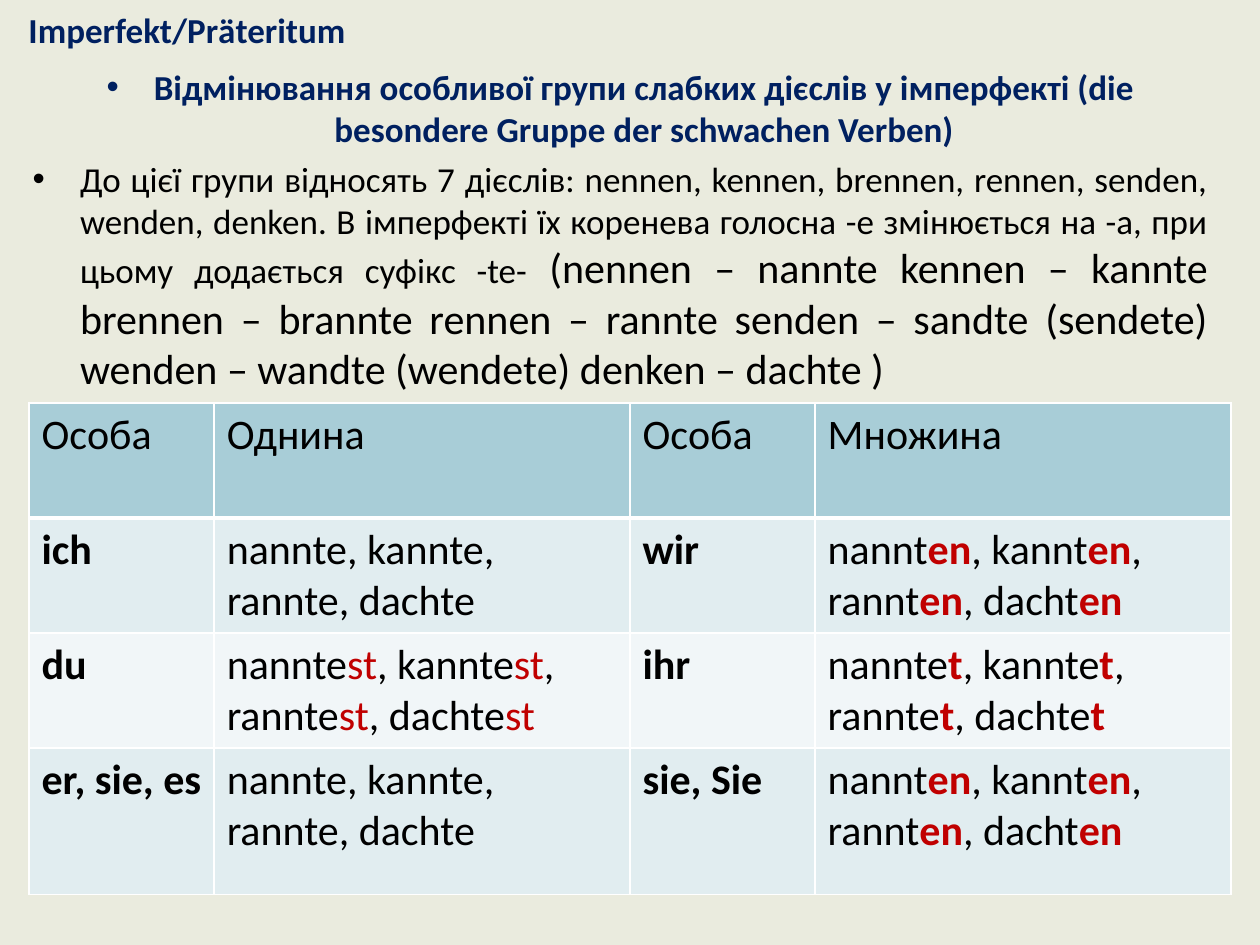
from lxml import etree
from pptx import Presentation
from pptx.dml.color import RGBColor
from pptx.enum.text import MSO_ANCHOR, MSO_AUTO_SIZE, PP_ALIGN
from pptx.oxml.ns import qn
from pptx.util import Inches, Pt

CENTER, JUSTIFY = PP_ALIGN.CENTER, PP_ALIGN.JUSTIFY
MIDDLE, NO_FIT = MSO_ANCHOR.MIDDLE, MSO_AUTO_SIZE.NONE
FONT = "Calibri"
NAVY, BLACK, RED, WHITE = "002060", "000000", "C00000", "FFFFFF"
BACKGROUND, HEADER_FILL = "EAEBDE", "A8CDD7"
BAND_FILLS = ["E1EDF0", "F1F6F8"]
COLUMN_WIDTHS = [1.47, 3.3] * 2
ROW_HEIGHTS = [0.91, 0.91, 0.91, 1.16]

HEADING = ("Відмінювання особливої групи слабких дієслів у імперфекті "
           "(die besondere Gruppe der schwachen Verben)")
RULE = ("До цієї групи відносять 7 дієслів: nennen, kennen, brennen, rennen, "
        "senden, wenden, denken. В імперфекті їх коренева голосна -е змінюється "
        "на -а, при цьому додається суфікс -te-")
EXAMPLES = (" (nennen – nannte kennen – kannte brennen – brannte rennen – rannte "
            "senden – sandte (sendete) wenden – wandte (wendete) denken – dachte )")
HEADERS = ["Особа", "Однина", "Особа", "Множина"]
STEMS = ["nannt", "kannt", "rannt", "dacht"]


def rgb(color):
    """Turn a hex string into a colour."""
    return RGBColor.from_string(color)


def add_run(paragraph, text, size=24, color=BLACK, bold=False):
    """Append one formatted run to a paragraph."""
    run = paragraph.add_run()
    run.text = text
    run.font.name = FONT
    run.font.size = Pt(size)
    run.font.bold = bold
    run.font.color.rgb = rgb(color)


def place(shape, left, top, width, height):
    """Move a placeholder to a place given in inches and fix its text size."""
    shape.left, shape.top = Inches(left), Inches(top)
    shape.width, shape.height = Inches(width), Inches(height)
    shape.text_frame.auto_size = NO_FIT


def fill_title(title):
    """Write the slide title."""
    place(title, 0, 0, 2.97, 0.47)
    title.text_frame.vertical_anchor = MIDDLE
    paragraph = title.text_frame.paragraphs[0]
    paragraph.alignment = CENTER
    add_run(paragraph, "Imperfekt/Prӓteritum", 20, NAVY, True)


def fill_body(body):
    """Write the heading and the grammar rule as bullets."""
    place(body, 0.16, 0.47, 9.53, 3.05)
    heading = body.text_frame.paragraphs[0]
    heading.alignment = CENTER
    add_run(heading, HEADING, 20, NAVY, True)
    rule = body.text_frame.add_paragraph()
    rule.alignment = JUSTIFY
    add_run(rule, RULE, 20)
    add_run(rule, EXAMPLES)


def plain(text, bold=False):
    """Give the runs of a cell with a single style."""
    return [(text, BLACK, bold)]


def conjugated(link, ending, bold):
    """Give the runs of all verbs with their endings in red."""
    runs = []
    for index, stem in enumerate(STEMS):
        separator = ", " if index else ""
        runs += [(separator + stem + link, BLACK, False), (ending, RED, bold)]
    return runs


def table_rows():
    """List the runs of every cell, row by row."""
    third_person = plain(", ".join(stem + "e" for stem in STEMS))
    plural = conjugated("", "en", True)
    return [
        [plain(text) for text in HEADERS],
        [plain("ich", True), third_person, plain("wir", True), plural],
        [plain("du", True), conjugated("e", "st", False),
         plain("ihr", True), conjugated("e", "t", True)],
        [plain("er, sie, es", True), third_person, plain("sie, Sie", True), plural],
    ]


def set_borders(cell, row):
    """Draw white cell borders, thicker below the header row."""
    properties = cell._tc.get_or_add_tcPr()
    thick_side = {0: "lnB", 1: "lnT"}.get(row)
    for side in ("lnL", "lnR", "lnT", "lnB"):
        width = Pt(3 if side == thick_side else 1)
        line = etree.SubElement(properties, qn("a:" + side), w=str(width))
        fill = etree.SubElement(line, qn("a:solidFill"))
        etree.SubElement(fill, qn("a:srgbClr"), val=WHITE)


def add_conjugation_table(slide):
    """Add the table of persons and verb forms."""
    rows = table_rows()
    table = slide.shapes.add_table(
        len(rows), len(HEADERS), Inches(0.23), Inches(3.2),
        Inches(sum(COLUMN_WIDTHS)), Inches(sum(ROW_HEIGHTS))).table
    for column, width in zip(table.columns, COLUMN_WIDTHS):
        column.width = Inches(width)
    for row, height in zip(table.rows, ROW_HEIGHTS):
        row.height = Inches(height)
    for row_index, row in enumerate(rows):
        fill = BAND_FILLS[(row_index - 1) % 2] if row_index else HEADER_FILL
        for column_index, runs in enumerate(row):
            cell = table.cell(row_index, column_index)
            set_borders(cell, row_index)
            cell.fill.solid()
            cell.fill.fore_color.rgb = rgb(fill)
            for text, color, bold in runs:
                add_run(cell.text_frame.paragraphs[0], text, color=color, bold=bold)


def main():
    """Build the slide and save it."""
    presentation = Presentation()
    presentation.slide_width, presentation.slide_height = Inches(10), Inches(7.5)
    slide = presentation.slides.add_slide(presentation.slide_layouts[1])
    slide.background.fill.solid()
    slide.background.fill.fore_color.rgb = rgb(BACKGROUND)
    fill_title(slide.shapes.title)
    fill_body(slide.placeholders[1])
    add_conjugation_table(slide)
    presentation.save("out.pptx")


if __name__ == "__main__":
    main()
